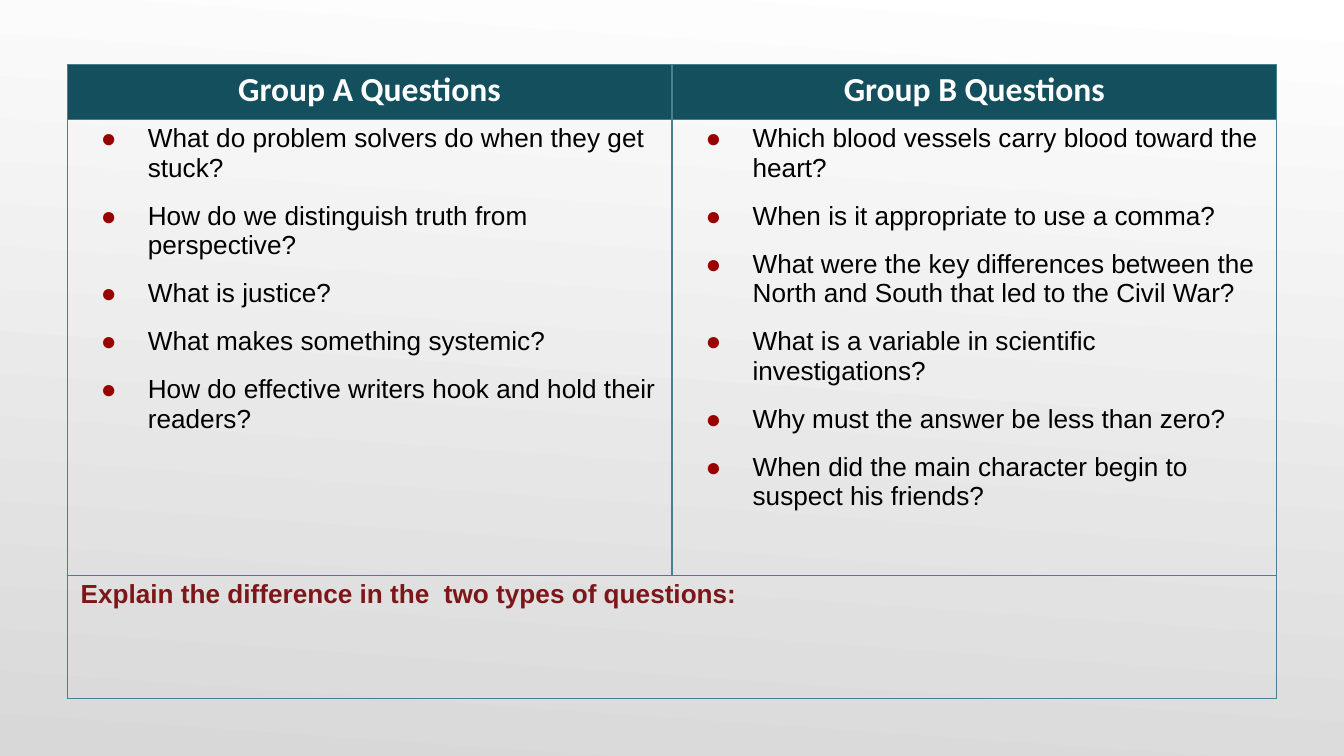
from dataclasses import dataclass

from lxml.etree import SubElement
from pptx import Presentation
from pptx.dml.color import RGBColor
from pptx.enum.text import PP_ALIGN
from pptx.oxml import parse_xml
from pptx.oxml.ns import nsdecls, qn
from pptx.slide import Slide
from pptx.table import Table, _Cell
from pptx.text.text import _Paragraph
from pptx.util import Emu, Pt

EMU_PER_PX = 4572  # 200 px to the inch
HEADER_FILL = "134F5C"
BORDER = "45818E"
BULLET = "980000"
COLUMN_WIDTHS = (900, 900)
ROW_HEIGHTS = (82, 678, 183)


@dataclass(frozen=True)
class TextStyle:
    font: str
    size: int
    colour: str
    bold: bool = False


@dataclass(frozen=True)
class QuestionGroup:
    heading: str
    questions: tuple[str, ...]
    space_after_last: int = 0


HEADING = TextStyle("Calibri", 18, "FFFFFF", True)
QUESTION = TextStyle("Arial", 14, "000000")
PROMPT = TextStyle("Arial", 14, "7D1619", True)

GROUPS = (
    QuestionGroup("Group A Questions", (
        "What do problem solvers do when they get stuck?",
        "How do we distinguish truth from perspective?",
        "What is justice?",
        "What makes something systemic?",
        "How do effective writers hook and hold their readers?",
    )),
    QuestionGroup("Group B Questions", (
        "Which blood vessels carry blood toward the heart?",
        "When is it appropriate to use a comma?",
        "What were the key differences between the North and South that led to the Civil War?",
        "What is a variable in scientific investigations?",
        "Why must the answer be less than zero?",
        "When did the main character begin to suspect his friends?",
    ), space_after_last=10),
)


def px(length: int) -> Emu:
    return Emu(length * EMU_PER_PX)


def rgb(colour: str) -> RGBColor:
    return RGBColor.from_string(colour)


def paint_background(slide: Slide) -> None:
    fill = slide.background.fill
    fill.gradient()
    fill.gradient_angle = 360 - 94  # python-pptx counts anticlockwise
    for stop, colour in zip(fill.gradient_stops, ("FFFFFF", "D8D8D8")):
        stop.color.rgb = rgb(colour)


def format_cell(cell: _Cell, fill: str | None = None) -> None:
    """Set margins, fill and the four borders of a cell."""
    cell.margin_left = cell.margin_right = px(20)
    cell.margin_top = cell.margin_bottom = px(7)
    if fill:
        cell.fill.solid()
        cell.fill.fore_color.rgb = rgb(fill)
    else:
        cell.fill.background()
    properties = cell._tc.get_or_add_tcPr()
    for position, side in enumerate(("lnL", "lnR", "lnT", "lnB")):
        properties.insert(position, parse_xml(
            f'<a:{side} {nsdecls("a")} w="{Pt(0.75)}"><a:solidFill>'
            f'<a:srgbClr val="{BORDER}"/></a:solidFill></a:{side}>'))


def add_text(paragraph: _Paragraph, text: str, style: TextStyle) -> None:
    run = paragraph.add_run()
    run.text = text
    run.font.name = style.font
    run.font.size = Pt(style.size)
    run.font.bold = style.bold
    run.font.color.rgb = rgb(style.colour)


def add_bullet(paragraph: _Paragraph) -> None:
    properties = paragraph._p.get_or_add_pPr()
    properties.set("marL", str(px(100)))
    properties.set("indent", str(px(-70)))
    colour = SubElement(properties, qn("a:buClr"))
    SubElement(colour, qn("a:srgbClr"), val=BULLET)
    SubElement(properties, qn("a:buFont"), typeface="Arial")
    SubElement(properties, qn("a:buChar"), char="●")


def fill_group(table: Table, column: int, group: QuestionGroup) -> None:
    heading = table.cell(0, column).text_frame.paragraphs[0]
    heading.alignment = PP_ALIGN.CENTER
    add_text(heading, group.heading, HEADING)

    frame = table.cell(1, column).text_frame
    for index, question in enumerate(group.questions):
        paragraph = frame.add_paragraph() if index else frame.paragraphs[0]
        add_bullet(paragraph)
        paragraph.space_before = Pt(10 if index else 0)
        add_text(paragraph, question, QUESTION)
    paragraph.space_after = Pt(group.space_after_last)


def add_question_table(slide: Slide) -> None:
    frame = slide.shapes.add_table(
        len(ROW_HEIGHTS), len(COLUMN_WIDTHS),
        px(100), px(96), px(sum(COLUMN_WIDTHS)), px(sum(ROW_HEIGHTS)))
    table = frame.table
    table.horz_banding = False
    for column, width in zip(table.columns, COLUMN_WIDTHS):
        column.width = px(width)
    for index, (row, height) in enumerate(zip(table.rows, ROW_HEIGHTS)):
        row.height = px(height)
        for cell in row.cells:
            format_cell(cell, HEADER_FILL if index == 0 else None)
    for column, group in enumerate(GROUPS):
        fill_group(table, column, group)
    prompt = table.cell(2, 0)
    prompt.merge(table.cell(2, 1))
    add_text(prompt.text_frame.paragraphs[0],
             "Explain the difference in the  two types of questions:", PROMPT)


def main() -> None:
    presentation = Presentation()
    presentation.slide_width = px(2000)
    presentation.slide_height = px(1125)
    slide = presentation.slides.add_slide(presentation.slide_layouts[6])
    paint_background(slide)
    add_question_table(slide)
    presentation.save("out.pptx")


if __name__ == "__main__":
    main()
